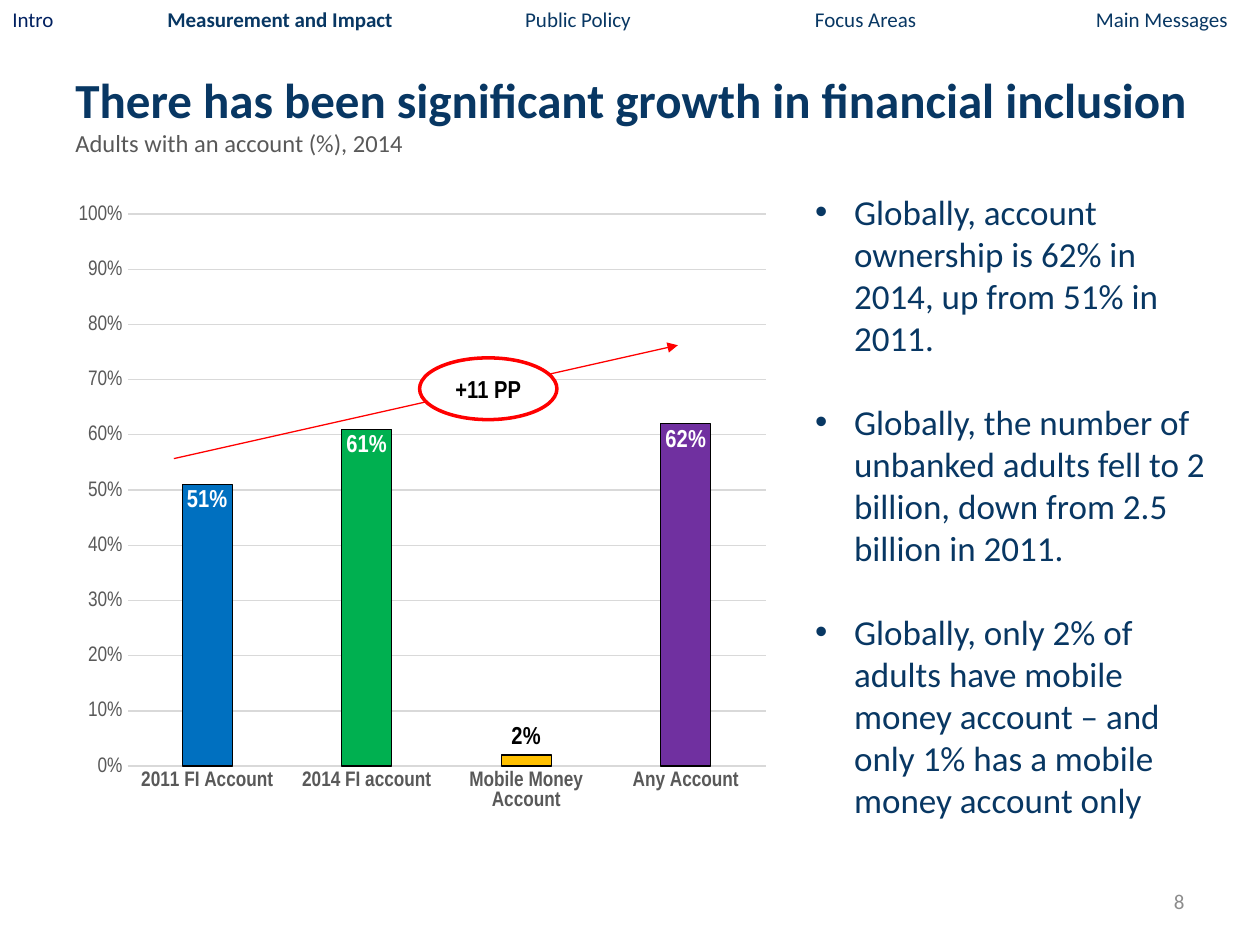
from lxml import etree
from pptx import Presentation
from pptx.chart.data import CategoryChartData
from pptx.dml.color import RGBColor
from pptx.enum.chart import XL_CHART_TYPE, XL_LABEL_POSITION, XL_TICK_MARK
from pptx.enum.shapes import MSO_CONNECTOR, MSO_SHAPE
from pptx.enum.text import MSO_ANCHOR, MSO_AUTO_SIZE, PP_ALIGN
from pptx.oxml import parse_xml
from pptx.oxml.ns import nsdecls, qn
from pptx.util import Inches, Pt

COLUMN = XL_CHART_TYPE.COLUMN_CLUSTERED
IN_END, OUT_END = XL_LABEL_POSITION.INSIDE_END, XL_LABEL_POSITION.OUTSIDE_END
NO_TICK = XL_TICK_MARK.NONE
STRAIGHT = MSO_CONNECTOR.STRAIGHT
OVAL = MSO_SHAPE.OVAL
TOP, MIDDLE = MSO_ANCHOR.TOP, MSO_ANCHOR.MIDDLE
FIT = MSO_AUTO_SIZE.SHAPE_TO_FIT_TEXT
LEFT, CENTER, RIGHT = PP_ALIGN.LEFT, PP_ALIGN.CENTER, PP_ALIGN.RIGHT


def rgb(code):
    return RGBColor.from_string(code)


class Page:
    body, narrow = "Calibri", "Arial Narrow"
    navy, gray, grid, red = "083763", "595959", "D9D9D9", "FF0000"

    def __init__(self, slide):
        self.slide = slide
        self.shapes = slide.shapes

    def font(self, font, size, color, bold=False, name=None):
        font.name = name or self.body
        font.size = Pt(size)
        font.bold = bold
        font.color.rgb = rgb(color)

    def stroke(self, line, color, width=0.75):
        line.color.rgb = rgb(color)
        line.width = Pt(width)

    def text(self, box, lines, align=LEFT, anchor=TOP):
        """Each line is (text, size, color, bold)."""
        frame = self.shapes.add_textbox(*map(Inches, box)).text_frame
        frame.word_wrap = True
        frame.vertical_anchor = anchor
        if anchor == TOP:
            frame.auto_size = FIT
        frame.text = "\n".join(line[0] for line in lines)
        for para, (_, *style) in zip(frame.paragraphs, lines):
            para.alignment = align
            for run in para.runs:
                self.font(run.font, *style)
        return frame

    def bullets(self, box, items, size, indent):
        frame = self.text(box, [(item, size, self.navy) for item in items])
        for para in frame.paragraphs:
            para.space_after = Pt(size * 1.2)
            props = para._p.get_or_add_pPr()
            props.set("marL", str(Inches(indent)))
            props.set("indent", str(-Inches(indent)))
            etree.SubElement(props, qn("a:buFont")).set("typeface", "Arial")
            etree.SubElement(props, qn("a:buChar")).set("char", "•")

    def menu(self, box, items, stops, active):
        para = self.text(box, [("", 12, self.navy)]).paragraphs[0]
        tabs = etree.SubElement(para._p.get_or_add_pPr(), qn("a:tabLst"))
        for stop in stops:
            tab = etree.SubElement(tabs, qn("a:tab"))
            tab.set("pos", str(Inches(stop)))
            tab.set("algn", "l")
        for i, item in enumerate(items):
            run = para.add_run()
            run.text = item if i == 0 else "\t" + item
            color = self.navy if i else "002060"
            self.font(run.font, 12, color, item == active)

    def columns(self, box, bars, outside):
        """Each bar is (name, value, color)."""
        data = CategoryChartData(number_format="0%")
        data.categories = [name for name, _, _ in bars]
        data.add_series("Series 1", [value for _, value, _ in bars])
        chart = self.shapes.add_chart(COLUMN, *map(Inches, box), data).chart
        chart.has_legend = chart.has_title = False
        self.font(chart.font, 12, "000000", name=self.narrow)

        # Axes
        cat, val = chart.category_axis, chart.value_axis
        for axis in (cat, val):
            axis.major_tick_mark = axis.minor_tick_mark = NO_TICK
            self.font(axis.tick_labels.font, 12, self.gray, axis is cat, self.narrow)
        self.stroke(cat.format.line, self.grid)
        val.format.line.fill.background()
        val.minimum_scale, val.maximum_scale, val.major_unit = 0, 1, 0.1
        val.tick_labels.number_format = "0%"
        val.tick_labels.number_format_is_linked = False
        self.stroke(val.major_gridlines.format.line, self.grid)

        # Bars and their labels
        plot = chart.plots[0]
        plot.gap_width, plot.overlap, plot.vary_by_categories = 219, -27, False
        series = plot.series[0]
        labels = series.data_labels
        labels.show_value = True
        labels.number_format = "0%"
        labels.number_format_is_linked = False
        labels.position = IN_END
        self.font(labels.font, 14, "FFFFFF", True, self.narrow)
        for i, (_, _, color) in enumerate(bars):
            look = series.points[i].format
            look.fill.solid()
            look.fill.fore_color.rgb = rgb(color)
            self.stroke(look.line, "000000")
        label = series.points[outside].data_label
        self.font(label.font, 14, "000000", True, self.narrow)
        label.position = OUT_END

        # Fixed plot area
        area = chart._chartSpace.chart.plotArea
        for old in area.findall(qn("c:layout")):
            area.remove(old)
        sizes = {"x": 0.09, "y": 0.03, "w": 0.89, "h": 0.88}
        parts = "".join(f'<c:{k} val="{v}"/>' for k, v in sizes.items())
        area.insert(0, parse_xml(
            f'<c:layout {nsdecls("c")}><c:manualLayout>'
            '<c:layoutTarget val="inner"/><c:xMode val="edge"/><c:yMode val="edge"/>'
            f'{parts}</c:manualLayout></c:layout>'))

    def arrow(self, start, end):
        link = self.shapes.add_connector(STRAIGHT, *map(Inches, start + end))
        self.stroke(link.line, self.red)
        tail = etree.SubElement(link.line._get_or_add_ln(), qn("a:tailEnd"))
        tail.set("type", "triangle")
        etree.SubElement(link._element.spPr, qn("a:effectLst"))

    def badge(self, box, text):
        oval = self.shapes.add_shape(OVAL, *map(Inches, box))
        oval.shadow.inherit = False
        oval.fill.solid()
        oval.fill.fore_color.rgb = rgb("FFFFFF")
        self.stroke(oval.line, self.red, 2)
        frame = oval.text_frame
        frame.text = text
        frame.vertical_anchor = MIDDLE
        para = frame.paragraphs[0]
        para.alignment = CENTER
        self.font(para.runs[0].font, 14, "000000", True, self.narrow)


def main():
    deck = Presentation()
    deck.slide_width, deck.slide_height = Inches(10), Inches(7.5)
    page = Page(deck.slides.add_slide(deck.slide_layouts[6]))

    # Title and subtitle
    page.text((0.5, 0.5, 9.25, 0.81), [
        ("There has been significant growth in financial inclusion", 28, page.navy, True),
        ("Adults with an account (%), 2014", 14, page.gray, False),
    ])

    # Account chart with growth arrow
    page.columns((0.5, 1.55, 5.69, 4.98), [
        ("2011 FI Account", 0.51, "0070C0"),
        ("2014 FI account", 0.61, "00B050"),
        ("Mobile Money Account", 0.02, "FFC000"),
        ("Any Account", 0.62, "7030A0"),
    ], outside=2)
    page.arrow((1.38, 3.64), (5.38, 2.74))
    page.badge((3.33, 2.84, 1.09, 0.49), "+11 PP")

    # Page number
    page.text((7.17, 6.95, 2.33, 0.4), [("8", 12, "8C8C8C")], RIGHT, MIDDLE)

    # Findings
    page.bullets((6.37, 1.46, 3.38, 5.45), [
        "Globally, account ownership is 62% in 2014, up from 51% in 2011.",
        "Globally, the number of unbanked adults fell to 2 billion, down from 2.5 billion in 2011.",
        "Globally, only 2% of adults have mobile money account – and only 1% has a mobile money account only",
    ], 20, 0.31)

    # Section menu
    page.menu((0, 0, 10, 0.3),
              ["Intro", "Measurement and Impact", "Public Policy", "Focus Areas", "Main Messages"],
              [1.23, 4.07, 6.37, 8.6], "Measurement and Impact")

    deck.save("out.pptx")


if __name__ == "__main__":
    main()
